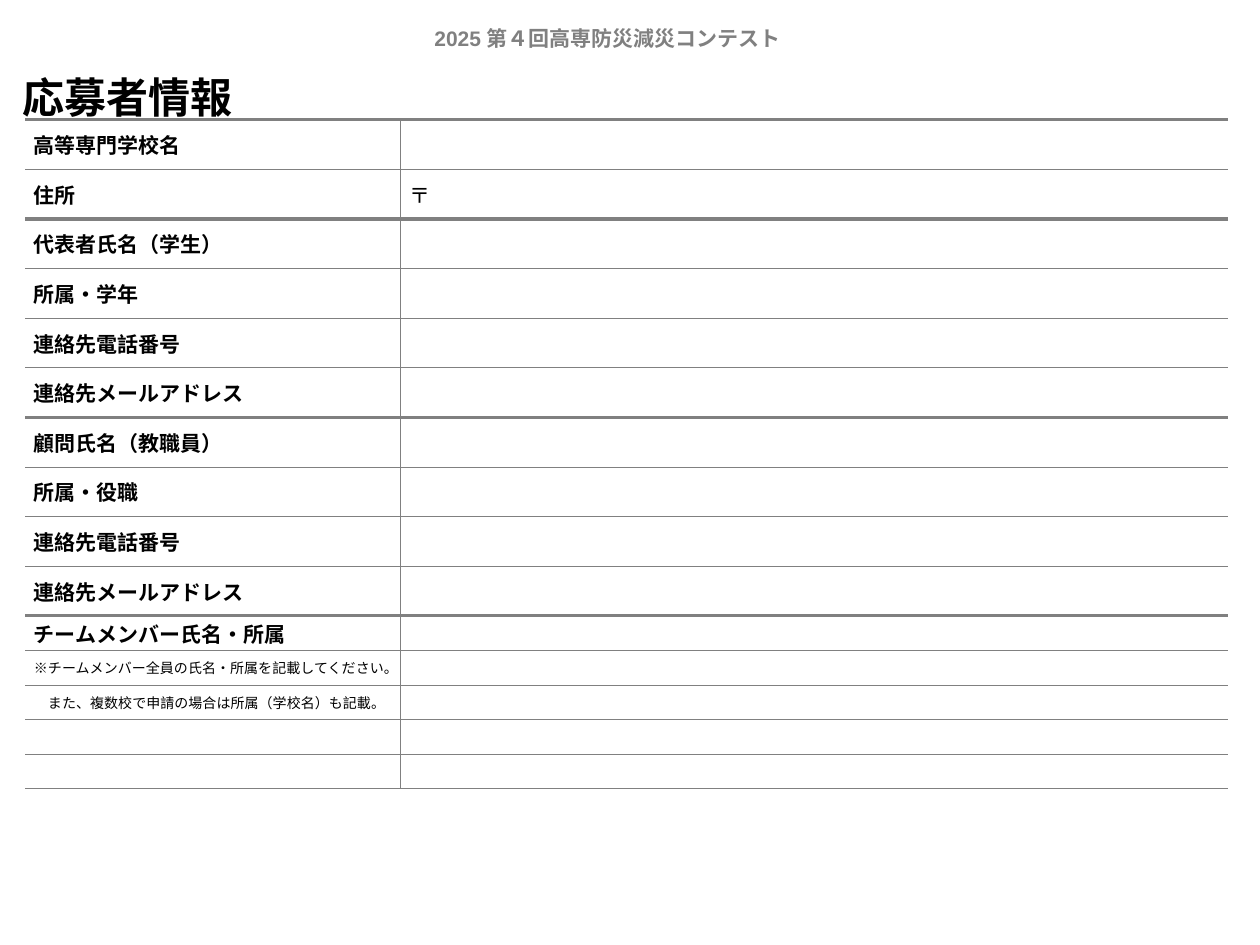
"""Build the applicant information form slide."""
from dataclasses import dataclass

from lxml.etree import SubElement
from pptx import Presentation
from pptx.dml.color import RGBColor
from pptx.enum.text import MSO_ANCHOR, PP_ALIGN
from pptx.oxml.ns import qn
from pptx.util import Inches, Pt

GRAY, BLACK, WHITE = "808080", "000000", "FFFFFF"
CJK = "Noto Sans CJK JP"
THIN, THICK = 0.5, 2.25


@dataclass
class Row:
    label: str = ""
    value: str = ""
    height: float = 0.394
    size: float = 12
    bold: bool = True
    font: str = CJK
    pad: float = 0.04


def member_row(label: str = "") -> Row:
    return Row(label, height=0.275, size=8, bold=False)


GROUPS = [
    [Row("高等専門学校名", font="Calibri"), Row("住所", "〒", font="Calibri")],
    [Row("代表者氏名（学生）"), Row("所属・学年"),
     Row("連絡先電話番号"), Row("連絡先メールアドレス")],
    [Row("顧問氏名（教職員）"), Row("所属・役職"),
     Row("連絡先電話番号"), Row("連絡先メールアドレス")],
    [Row("チームメンバー氏名・所属", height=0.275, pad=0.01),
     member_row("※チームメンバー全員の氏名・所属を記載してください。"),
     member_row("　また、複数校で申請の場合は所属（学校名）も記載。"),
     member_row(), member_row()],
]


def rgb(value: str) -> RGBColor:
    return RGBColor.from_string(value)


def write(tf, text: str, size: float, bold: bool = True,
          font: str = CJK, color: str = BLACK) -> None:
    p = tf.paragraphs[0]
    p.alignment = PP_ALIGN.LEFT
    if not text:
        SubElement(p._p, qn("a:endParaRPr"), sz=str(int(size * 100)))
        return
    r = p.add_run()
    r.text = text
    for name, value in {"size": Pt(size), "bold": bold, "name": font}.items():
        setattr(r.font, name, value)
    r.font.color.rgb = rgb(color)
    SubElement(r._r.get_or_add_rPr(), qn("a:ea"), typeface=CJK)


def set_format(target, margins: tuple[float, float]) -> None:
    x, y = (Inches(m) for m in margins)
    values = {"margin_left": x, "margin_right": x, "margin_top": y,
              "margin_bottom": y, "vertical_anchor": MSO_ANCHOR.MIDDLE}
    for name, value in values.items():
        setattr(target, name, value)


def place(sp, left: float, top: float, width: float, height: float) -> None:
    for name, value in zip(("left", "top", "width", "height"),
                           (left, top, width, height)):
        setattr(sp, name, Inches(value))


def set_borders(cell, widths: dict[str, float]) -> None:
    tc_pr = cell._tc.get_or_add_tcPr()
    for side, width in widths.items():
        ln = SubElement(tc_pr, qn(f"a:ln{side}"), w=str(int(Pt(width))))
        if width:
            fill = SubElement(ln, qn("a:solidFill"))
            SubElement(fill, qn("a:srgbClr"), val=GRAY)
        else:
            SubElement(ln, qn("a:noFill"))


def draw_form(s) -> None:
    rows = [row for group in GROUPS for row in group]
    edges = [THICK if i == 0 else THIN
             for group in GROUPS for i in range(len(group))] + [THIN]
    height = sum(row.height for row in rows)
    table = s.shapes.add_table(len(rows), 2, Inches(0.2), Inches(0.95),
                               Inches(9.55), Inches(height)).table
    table.first_row = table.horz_banding = False
    for column, width in zip(table.columns, (2.98, 6.57)):
        column.width = Inches(width)
    for i, row in enumerate(rows):
        table.rows[i].height = Inches(row.height)
        for j, text in enumerate((row.label, row.value)):
            cell = table.cell(i, j)
            set_format(cell, (0.07, row.pad))
            set_borders(cell, {"L": THIN * j, "R": THIN * (1 - j),
                               "T": edges[i], "B": edges[i + 1]})
            cell.fill.solid()
            cell.fill.fore_color.rgb = rgb(WHITE)
            write(cell.text_frame, text, row.size if text else 8,
                  row.bold and j == 0, row.font)


def main() -> None:
    prs = Presentation()
    prs.slide_width, prs.slide_height = Inches(10), Inches(7.5)
    s = prs.slides.add_slide(prs.slide_layouts[5])
    title = s.shapes.title
    place(title, 0.11, 0.53, 10, 0.48)
    set_format(title.text_frame, (0.07, 0.04))
    write(title.text_frame, "応募者情報", 24)
    header = s.shapes.add_textbox(Inches(3.35), Inches(0.15),
                                  Inches(3.17), Inches(0.3))
    header.text_frame.word_wrap = True
    set_format(header.text_frame, (0.1, 0.05))
    write(header.text_frame, "2025 第４回高専防災減災コンテスト", 12,
          font="Arial", color=GRAY)
    draw_form(s)
    prs.save("out.pptx")


if __name__ == "__main__":
    main()
